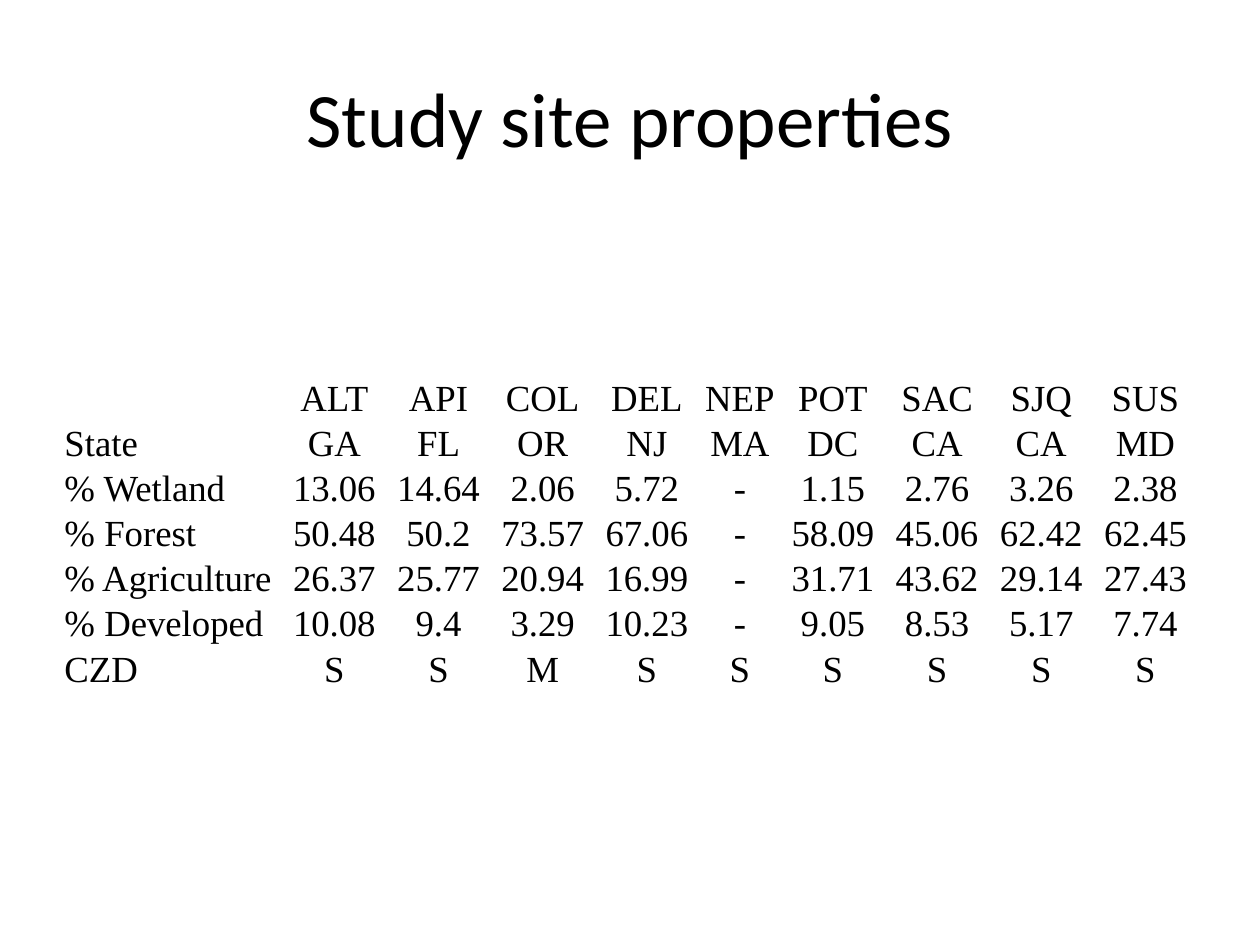
"""Build the slide with the table of study site properties."""
from dataclasses import dataclass

from pptx import Presentation
from pptx.dml.color import RGBColor
from pptx.enum.text import MSO_ANCHOR, PP_ALIGN
from pptx.util import Cm, Pt

LEFT, CENTER = PP_ALIGN.LEFT, PP_ALIGN.CENTER
MIDDLE, BOTTOM = MSO_ANCHOR.MIDDLE, MSO_ANCHOR.BOTTOM
TITLE_ONLY = 5

COLORS = {"text": "000000"}
TITLE_FONT = {"name": "Calibri", "size": Pt(44)}
TABLE_FONT = {"name": "Times New Roman", "size": Pt(21), "bold": False}
CELL_FORMAT = {
    "margin_left": Cm(0.03),
    "margin_right": Cm(0.03),
    "margin_top": Cm(0.03),
    "margin_bottom": Cm(0),
    "vertical_anchor": BOTTOM,
}
TITLE_BOX = {"left": Cm(1.27), "top": Cm(0.76), "width": Cm(22.86), "height": Cm(3.18)}
TABLE_LEFT, TABLE_TOP, ROW_HEIGHT = Cm(1.27), Cm(7.54), Cm(0.91)
LABEL_WIDTH = Cm(4.42)


@dataclass(frozen=True)
class Site:
    """One study site, shown as a table column."""

    code: str
    state: str
    wetland: str
    forest: str
    agriculture: str
    developed: str
    czd: str
    width: float = 2.1

    def values(self) -> tuple:
        """Return the cell texts from top to bottom."""
        return (self.code, self.state, self.wetland, self.forest,
                self.agriculture, self.developed, self.czd)


LABELS = ("", "State", "% Wetland", "% Forest", "% Agriculture", "% Developed", "CZD")
SITES = (
    Site("ALT", "GA", "13.06", "50.48", "26.37", "10.08", "S"),
    Site("API", "FL", "14.64", "50.2", "25.77", "9.4", "S"),
    Site("COL", "OR", "2.06", "73.57", "20.94", "3.29", "M"),
    Site("DEL", "NJ", "5.72", "67.06", "16.99", "10.23", "S"),
    Site("NEP", "MA", "-", "-", "-", "-", "S", width=1.65),
    Site("POT", "DC", "1.15", "58.09", "31.71", "9.05", "S"),
    Site("SAC", "CA", "2.76", "45.06", "43.62", "8.53", "S"),
    Site("SJQ", "CA", "3.26", "62.42", "29.14", "5.17", "S"),
    Site("SUS", "MD", "2.38", "62.45", "27.43", "7.74", "S"),
)


def apply_format(target: object, values: dict) -> None:
    """Set each named attribute on the target."""
    for name, value in values.items():
        setattr(target, name, value)


def write_text(para: object, text: str, font: dict, align: PP_ALIGN) -> None:
    """Write one formatted span into a paragraph."""
    para.alignment = align
    if text:
        span = para.add_run()
        span.text = text
        apply_format(span.font, font)
        span.font.color.rgb = RGBColor.from_string(COLORS["text"])


def draw_title(page: object, text: str) -> None:
    """Place and fill the title placeholder."""
    title = page.shapes.title
    apply_format(title, TITLE_BOX)
    title.text_frame.vertical_anchor = MIDDLE
    write_text(title.text_frame.paragraphs[0], text, TITLE_FONT, CENTER)


def draw_column(table: object, index: int, texts: tuple, width: int, align: PP_ALIGN) -> None:
    """Fill one table column from top to bottom."""
    table.columns[index].width = width
    for row, text in enumerate(texts):
        cell = table.cell(row, index)
        apply_format(cell, CELL_FORMAT)
        cell.fill.background()
        write_text(cell.text_frame.paragraphs[0], text, TABLE_FONT, align)


def draw_table(page: object) -> None:
    """Draw the label column and one column per site."""
    width = LABEL_WIDTH + sum(Cm(site.width) for site in SITES)
    table = page.shapes.add_table(
        len(LABELS), len(SITES) + 1, TABLE_LEFT, TABLE_TOP, width, ROW_HEIGHT * len(LABELS)
    ).table
    apply_format(table, {"first_row": False, "horz_banding": False})
    draw_column(table, 0, LABELS, LABEL_WIDTH, LEFT)
    for index, site in enumerate(SITES, start=1):
        draw_column(table, index, site.values(), Cm(site.width), CENTER)


def main() -> None:
    """Create and save the deck."""
    deck = Presentation()
    apply_format(deck, {"slide_width": Cm(25.4), "slide_height": Cm(19.05)})
    page = deck.slides.add_slide(deck.slide_layouts[TITLE_ONLY])
    draw_title(page, "Study site properties")
    draw_table(page)
    deck.save("out.pptx")


if __name__ == "__main__":
    main()
